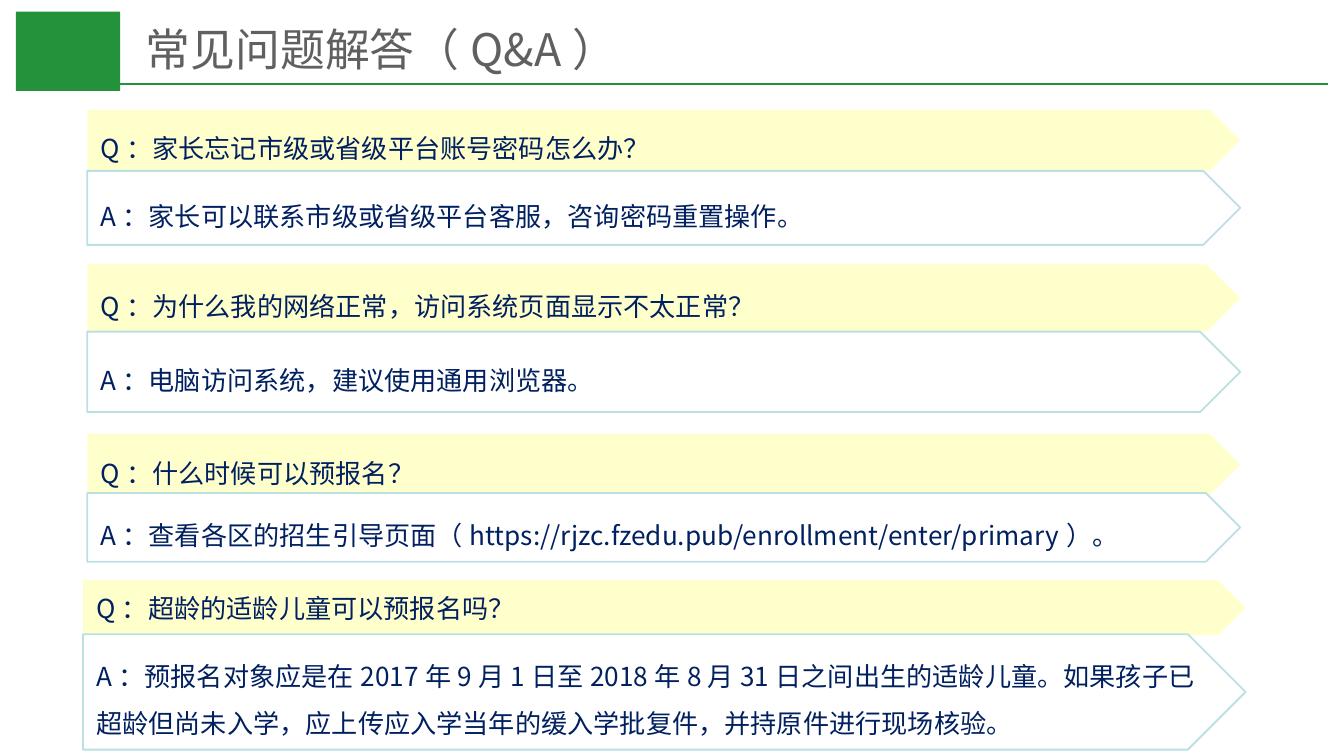
"""Build the frequently asked questions slide."""
from dataclasses import dataclass

from lxml.etree import SubElement
from pptx import Presentation
from pptx.dml.color import RGBColor
from pptx.enum.shapes import MSO_CONNECTOR, MSO_SHAPE
from pptx.enum.text import MSO_ANCHOR, PP_ALIGN
from pptx.oxml.ns import qn
from pptx.util import Cm, Pt


@dataclass(frozen=True)
class Theme:
    font: str = "Noto Sans CJK SC"
    title_size: int = 24
    body_size: int = 14
    green: str = "24923B"
    gray: str = "606060"
    navy: str = "002060"
    yellow: str = "FFFFCC"
    white: str = "FFFFFF"
    pale_blue: str = "BBE0E3"


THEME = Theme()
TITLE = "常见问题解答（Q&A）"
ENTRIES = [
    {
        "question": "Q：家长忘记市级或省级平台账号密码怎么办？",
        "answer": "A：家长可以联系市级或省级平台客服，咨询密码重置操作。",
        "left": 1.65, "width": 21.79, "spacing": 1.5,
        "tops": (2.08, 3.23), "heights": (1.14, 1.4),
    },
    {
        "question": "Q：为什么我的网络正常，访问系统页面显示不太正常？",
        "answer": "A：电脑访问系统，建议使用通用浏览器。",
        "left": 1.65, "width": 21.79, "spacing": 1.5,
        "tops": (5, 6.27), "heights": (1.27, 1.52),
    },
    {
        "question": "Q：什么时候可以预报名？",
        "answer": "A：查看各区的招生引导页面（https://rjzc.fzedu.pub/enrollment/enter/primary）。",
        "left": 1.65, "width": 21.79, "spacing": 1.5,
        "tops": (8.2, 9.32), "heights": (1.17, 1.3),
    },
    {
        "question": "Q：超龄的适龄儿童可以预报名吗？",
        "answer": "A：预报名对象应是在2017年9月1日至2018年8月31日之间出生的适龄儿童。"
                  "如果孩子已超龄但尚未入学，应上传应入学当年的缓入学批复件，并持原件进行现场核验。",
        "left": 1.57, "width": 21.97, "spacing": 1,
        "tops": (10.97, 11.99), "heights": (1.04, 2.18),
    },
]


def write_text(shape, text, size, color, spacing=1.0):
    frame = shape.text_frame
    frame.word_wrap = True
    frame.vertical_anchor = MSO_ANCHOR.MIDDLE
    paragraph = frame.paragraphs[0]
    paragraph.text = text
    paragraph.alignment = PP_ALIGN.LEFT
    paragraph.line_spacing = spacing
    paragraph.font.name = THEME.font
    paragraph.font.size = Pt(size)
    paragraph.font.color.rgb = RGBColor.from_string(color)
    properties = paragraph._p.pPr.find(qn("a:defRPr"))
    SubElement(properties, qn("a:ea")).set("typeface", THEME.font)


def add_block(slide, preset, box, fill, outline=None):
    shape = slide.shapes.add_shape(preset, *map(Cm, box))
    shape.shadow.inherit = False
    shape.fill.solid()
    shape.fill.fore_color.rgb = RGBColor.from_string(fill)
    if outline:
        shape.line.color.rgb = RGBColor.from_string(outline)
        shape.line.width = Pt(1)
    else:
        shape.line.fill.background()
    return shape


def add_header(slide):
    add_block(slide, MSO_SHAPE.RECTANGLE, (0.3, 0.22, 1.97, 1.5), THEME.green)
    rule = slide.shapes.add_connector(
        MSO_CONNECTOR.STRAIGHT, Cm(2.27), Cm(1.58), Cm(25.1), Cm(1.58))
    rule.line.color.rgb = RGBColor.from_string(THEME.green)
    rule.line.width = Pt(1)
    SubElement(rule._element.spPr, qn("a:effectLst"))
    title = slide.shapes.add_textbox(Cm(2.51), Cm(0.48), Cm(21.59), Cm(0.86))
    write_text(title, TITLE, THEME.title_size, THEME.gray)


def add_entry(slide, entry):
    styles = (
        ("question", THEME.yellow, None, entry["spacing"]),
        ("answer", THEME.white, THEME.pale_blue, 1.5),
    )
    for style, top, height in zip(styles, entry["tops"], entry["heights"]):
        role, fill, outline, spacing = style
        box = (entry["left"], top, entry["width"], height)
        banner = add_block(slide, MSO_SHAPE.PENTAGON, box, fill, outline)
        write_text(banner, entry[role], THEME.body_size, THEME.navy, spacing)


def main():
    presentation = Presentation()
    presentation.slide_width = Cm(25.4)
    presentation.slide_height = Cm(14.29)
    slide = presentation.slides.add_slide(presentation.slide_layouts[6])
    add_header(slide)
    for entry in ENTRIES:
        add_entry(slide, entry)
    presentation.save("out.pptx")


if __name__ == "__main__":
    main()
